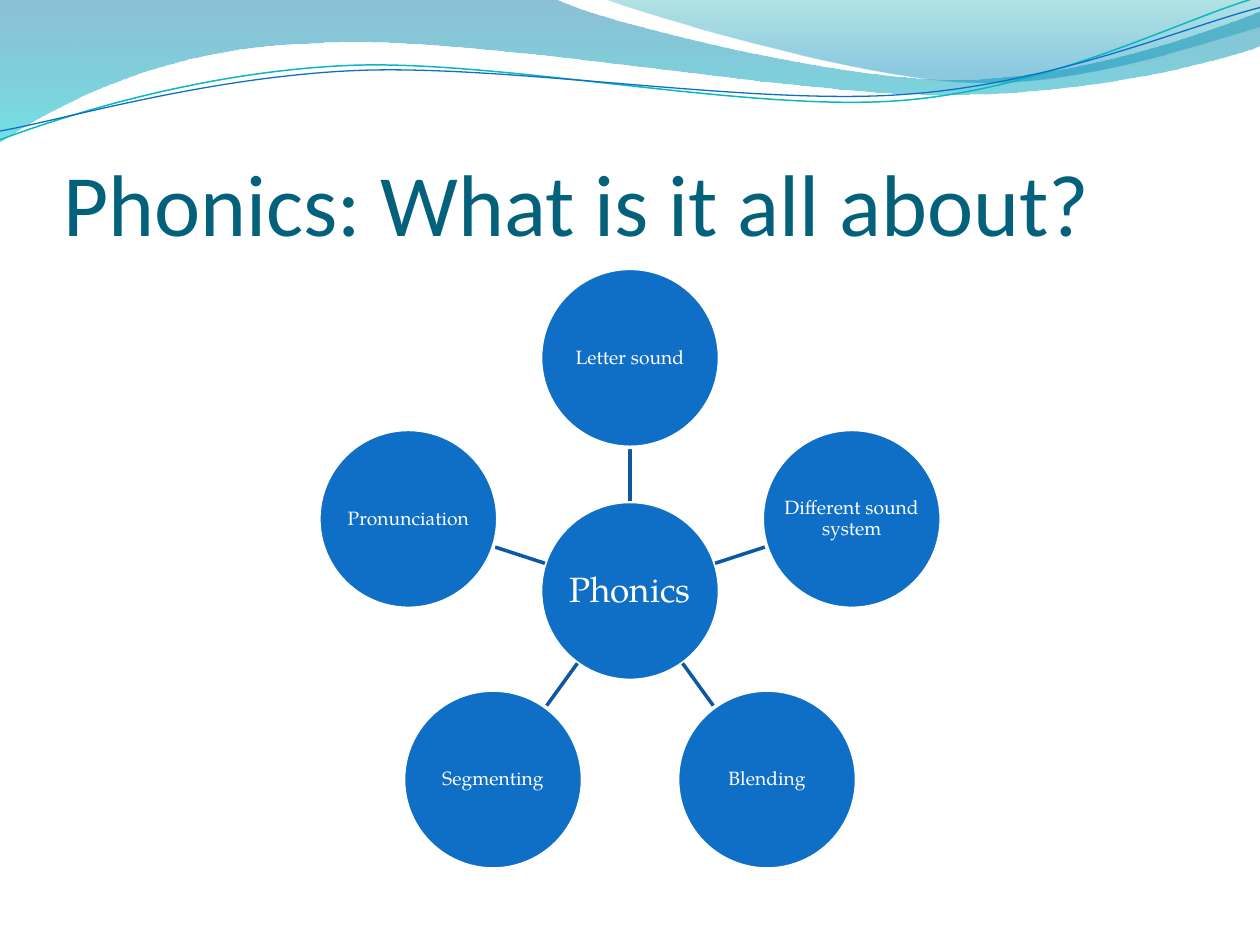
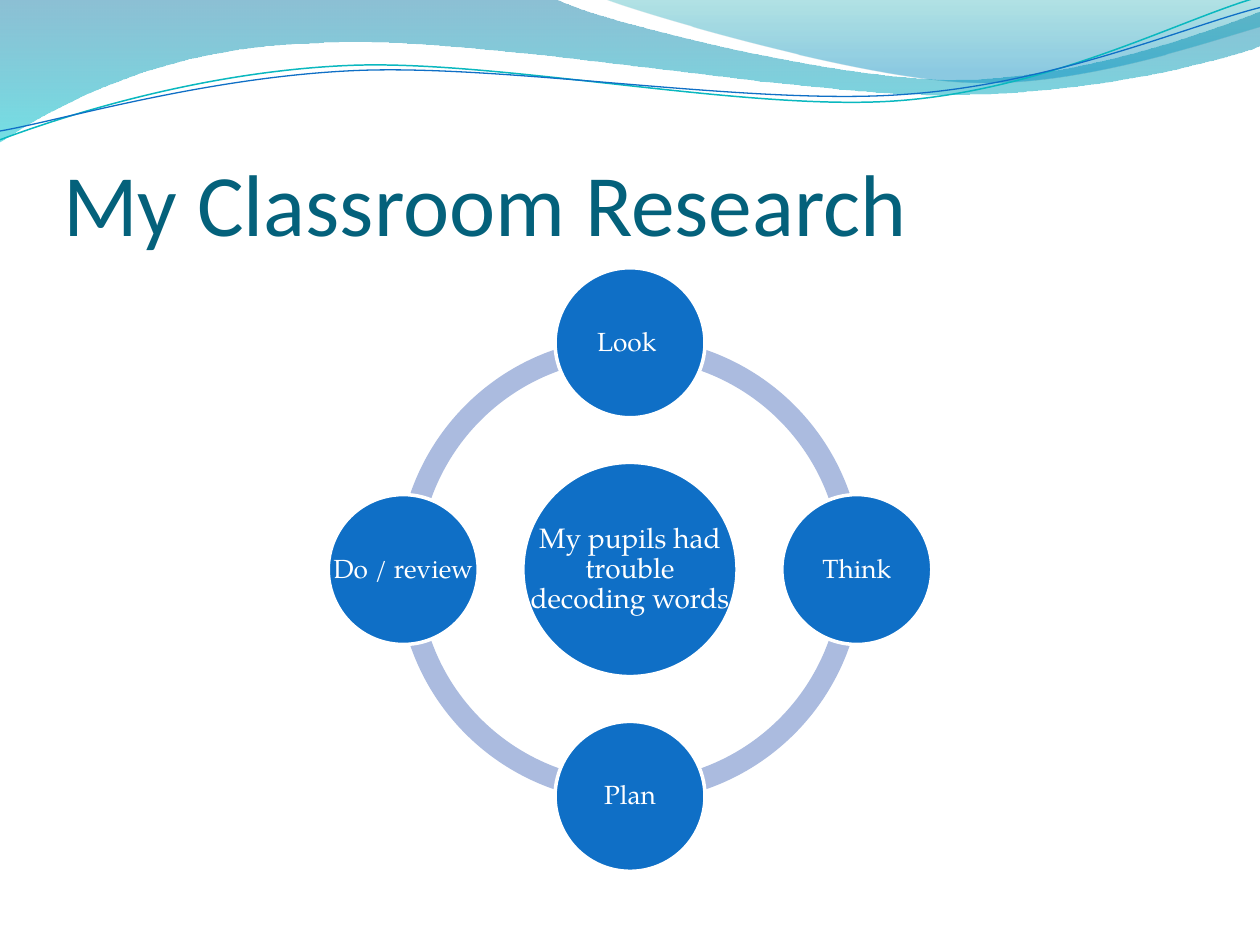
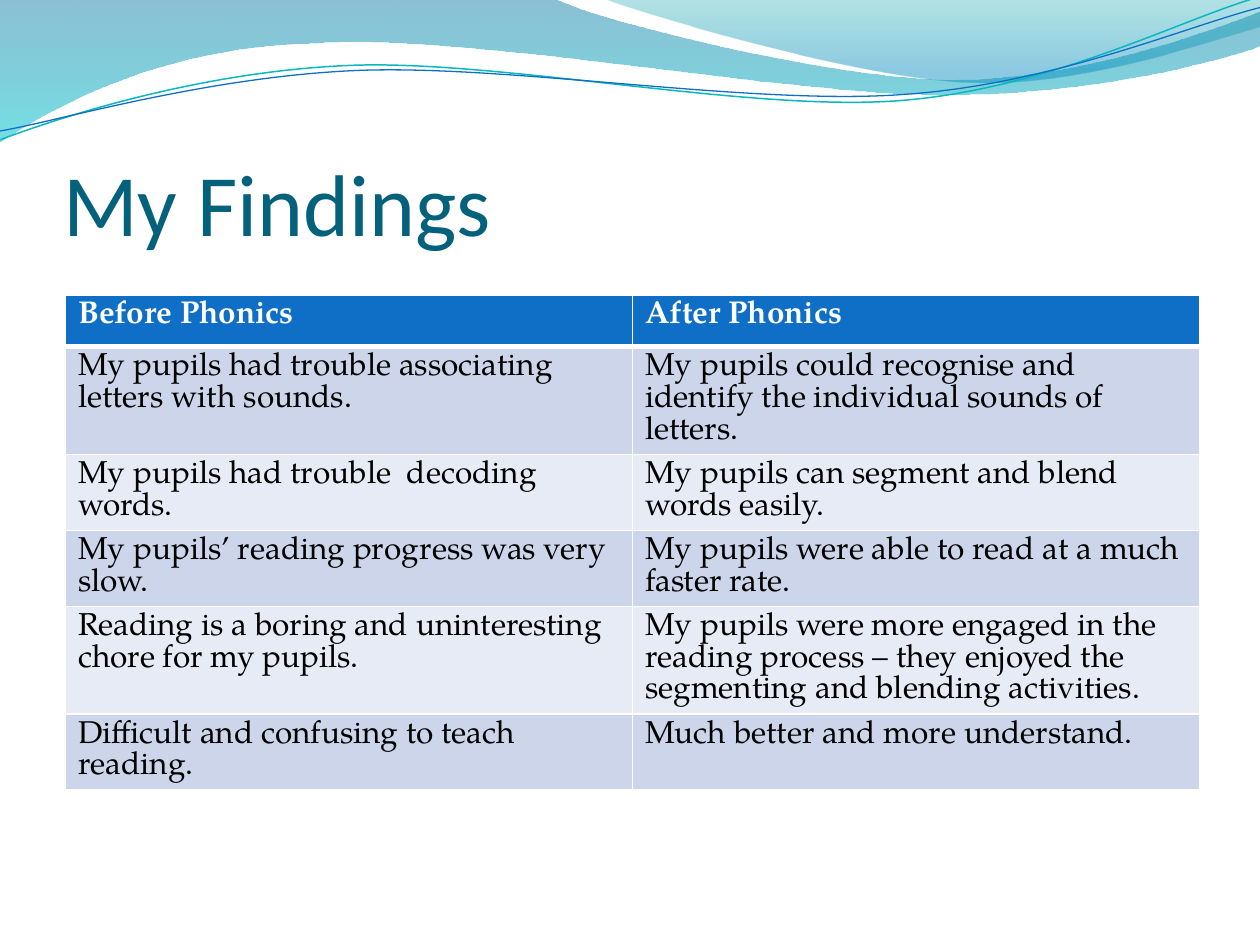
from dataclasses import dataclass
from math import cos, radians, sin

from lxml import etree
from pptx import Presentation
from pptx.dml.color import RGBColor
from pptx.enum import shapes, text
from pptx.oxml.ns import qn
from pptx.util import Inches, Pt


@dataclass(frozen=True)
class Theme:
    title_font: str = "Calibri"
    body_font: str = "TeX Gyre Pagella"
    title: str = "04617B"
    accent: str = "0F6FC6"
    spoke: str = "0C599F"
    ring: str = "ABBBDF"
    teal: str = "0AB8BF"
    white: str = "FFFFFF"
    black: str = "000000"
    bands: tuple = ("CCD5EA", "E7EBF5")
    title_size: float = 50
    hub_size: float = 20
    spoke_size: float = 11
    cycle_hub_size: float = 16
    cycle_size: float = 15
    table_size: float = 18
    outline: float = 2


THEME = Theme()

# Each wave: a start point, then corners (one point) or Bezier curves (three points).
# Gradient stops: position, colour, opacity in percent.
FILLED_WAVES = [
    ([[(0, 0)], [(4.4, -0.01)],
      [(4.76, 0.17), (6.64, 0.63), (7.58, 0.63)],
      [(8.53, 0.63), (9.58, 0.26), (10, 0.09)], [(10.01, 0.36)],
      [(9.83, 0.44), (8.7, 0.76), (7.46, 0.75)],
      [(6.22, 0.75), (3.82, 0.28), (2.57, 0.34)],
      [(1.29, 0.36), (0.46, 0.83), (-0.01, 1.13)], [(0, 0)]],
     [(0, "0074A1", 45), (1, "00C6CF", 55)]),
    ([[(4.79, -0.01)],
      [(5.09, 0.11), (6.82, 0.62), (7.69, 0.65)],
      [(8.56, 0.69), (9.61, 0.32), (10, 0.21)], [(10, 0)], [(4.79, -0.01)]],
     [(0, "00A1A9", 30), (0.8, "008BBF", 45)]),
]
LINE_WAVES = [
    ([[(0, 1.11)],
      [(0.48, 0.93), (1.58, 0.57), (2.77, 0.52)],
      [(3.95, 0.47), (5.93, 0.89), (7.13, 0.8)],
      [(8.33, 0.71), (9.38, 0.15), (9.98, -0.02)]], THEME.teal, 0.85),
    ([[(0, 1.04)],
      [(0.47, 0.96), (1.64, 0.61), (2.83, 0.56)],
      [(4.03, 0.51), (5.97, 0.84), (7.17, 0.75)],
      [(8.36, 0.67), (9.41, 0.21), (10, 0.06)]], THEME.accent, 0.75),
]

FINDINGS = [
    ("Before Phonics", "After Phonics"),
    ("My pupils had trouble associating letters with sounds.",
     "My pupils could recognise and identify the individual sounds of letters."),
    ("My pupils had trouble  decoding words.",
     "My pupils can segment and blend words easily."),
    ("My pupils’ reading progress was very slow.",
     "My pupils were able to read at a much faster rate."),
    ("Reading is a boring and uninteresting chore for my pupils.",
     "My pupils were more engaged in the reading process – they enjoyed the "
     "segmenting and blending activities."),
    ("Difficult and confusing to teach reading.",
     "Much better and more understand."),
]


def rgb(value):
    return RGBColor.from_string(value)


def style_text(tf, font, size, color, bold=False):
    for p in tf.paragraphs:
        for r in p.runs:
            r.font.name, r.font.size, r.font.bold = font, Pt(size), bold
            r.font.color.rgb = rgb(color)


def add_wave(slide, steps, closed):
    """Draw all points as a polygon, then join each group of three into a curve."""
    points = [(Inches(x), Inches(y)) for step in steps for x, y in step]
    builder = slide.shapes.build_freeform(*points[0])
    builder.add_line_segments(points[1:], close=closed)
    sp = builder.convert_to_shape()
    sp.shadow.inherit = False
    segments = iter(list(sp.element.iter(qn("a:lnTo"))))
    for step in steps[1:]:
        group = [next(segments) for _ in step]
        if len(group) == 3:
            curve = etree.Element(qn("a:cubicBezTo"))
            group[0].addprevious(curve)
            for segment in group:
                curve.append(segment[0])
                segment.getparent().remove(segment)
    return sp


def add_waves_to_master(prs, slide):
    """Draw the header waves and hand them over to the master, behind its placeholders."""
    waves = []
    for steps, stops in FILLED_WAVES:
        sp = add_wave(slide, steps, closed=True)
        sp.line.fill.background()
        sp.fill.gradient()
        sp.fill.gradient_angle = 270
        for stop, (position, color, _) in zip(sp.fill.gradient_stops, stops):
            stop.position, stop.color.rgb = position, rgb(color)
        for clr, (_, _, opacity) in zip(sp.element.iter(qn("a:srgbClr")), stops):
            etree.SubElement(clr, qn("a:alpha"), val=str(opacity * 1000))
        waves.append(sp)
    for steps, color, width in LINE_WAVES:
        sp = add_wave(slide, steps, closed=False)
        sp.fill.background()
        sp.line.color.rgb, sp.line.width = rgb(color), Pt(width)
        waves.append(sp)
    for i, sp in enumerate(waves):
        prs.slide_master.shapes.element.insert(2 + i, sp.element)


def add_titled_slide(prs, title):
    slide = prs.slides.add_slide(prs.slide_layouts.get_by_name("Title Only"))
    sp = slide.shapes.title
    sp.left, sp.top, sp.width, sp.height = map(Inches, (0.5, 0.77, 9, 1.25))
    tf = sp.text_frame
    tf.text = title
    tf.auto_size = text.MSO_AUTO_SIZE.NONE
    tf.vertical_anchor = text.MSO_ANCHOR.BOTTOM
    tf.margin_left = tf.margin_right = tf.margin_bottom = 0
    tf.margin_top = Inches(0.05)
    tf.paragraphs[0].alignment = text.PP_ALIGN.LEFT
    style_text(tf, THEME.title_font, THEME.title_size, THEME.title)
    return slide


def add_circle(slide, center, diameter, label, size):
    """Add a circle with a label that may use its full width."""
    box = [Inches(c - diameter / 2) for c in center] + [Inches(diameter)] * 2
    sp = slide.shapes.add_shape(shapes.MSO_SHAPE.OVAL, *box)
    sp.shadow.inherit = False
    sp.fill.solid()
    sp.fill.fore_color.rgb = rgb(THEME.accent)
    sp.line.color.rgb, sp.line.width = rgb(THEME.white), Pt(THEME.outline)
    tf = slide.shapes.add_textbox(*box).text_frame
    tf.word_wrap = True
    tf.vertical_anchor = text.MSO_ANCHOR.MIDDLE
    tf.margin_left = tf.margin_right = tf.margin_top = tf.margin_bottom = Inches(0.02)
    tf.text = label
    tf.paragraphs[0].alignment = text.PP_ALIGN.CENTER
    tf.paragraphs[0].line_spacing = 0.9
    style_text(tf, THEME.body_font, size, THEME.white)


def polar(center, radius, degrees):
    """Point at a clockwise angle from twelve o'clock."""
    a = radians(degrees)
    return center[0] + radius * sin(a), center[1] - radius * cos(a)


def add_spoke(slide, start, end):
    line = slide.shapes.add_connector(
        shapes.MSO_CONNECTOR.STRAIGHT, *map(Inches, (*start, *end)))
    line.line.color.rgb, line.line.width = rgb(THEME.spoke), Pt(THEME.outline)
    etree.SubElement(line.element.spPr, qn("a:effectLst"))


def add_radial(slide, center, radius, diameter, hub, labels):
    add_circle(slide, center, diameter, hub, THEME.hub_size)
    for i, label in enumerate(labels):
        angle = i * 360 / len(labels)
        add_spoke(slide, polar(center, diameter / 2, angle),
                  polar(center, radius - diameter / 2, angle))
        add_circle(slide, polar(center, radius, angle), diameter, label, THEME.spoke_size)


def add_cycle(slide, center, ring_diameter, radius, hub, labels):
    box = [Inches(c - ring_diameter / 2) for c in center] + [Inches(ring_diameter)] * 2
    quarter = 54  # 90 degrees in adjustment units
    for i in range(4):
        arc = slide.shapes.add_shape(shapes.MSO_SHAPE.BLOCK_ARC, *box)
        arc.shadow.inherit = False
        arc.adjustments[0] = quarter * i
        arc.adjustments[1] = quarter * ((i + 1) % 4)
        arc.adjustments[2] = 0.046
        arc.fill.solid()
        arc.fill.fore_color.rgb = rgb(THEME.ring)
        arc.line.fill.background()
    add_circle(slide, center, 1.7, hub, THEME.cycle_hub_size)
    for i, label in enumerate(labels):
        add_circle(slide, polar(center, radius, i * 360 / len(labels)), 1.19, label,
                   THEME.cycle_size)


def set_borders(cell, top, bottom):
    tc_pr = cell._tc.get_or_add_tcPr()
    for i, (side, width) in enumerate(
            (("lnL", 1), ("lnR", 1), ("lnT", top), ("lnB", bottom))):
        ln = etree.Element(qn(f"a:{side}"), w=str(Pt(width)))
        fill = etree.SubElement(ln, qn("a:solidFill"))
        etree.SubElement(fill, qn("a:srgbClr"), val=THEME.white)
        tc_pr.insert(i, ln)


def add_findings_table(slide, left, top, width, rows, row_height=0.41):
    table = slide.shapes.add_table(
        len(rows), len(rows[0]),
        *map(Inches, (left, top, width, row_height * len(rows)))).table
    for r, row in enumerate(rows):
        header = r == 0
        for c, words in enumerate(row):
            cell = table.cell(r, c)
            cell.text = words
            style_text(cell.text_frame, THEME.body_font, THEME.table_size,
                       THEME.white if header else THEME.black, bold=header)
            cell.fill.solid()
            cell.fill.fore_color.rgb = rgb(
                THEME.accent if header else THEME.bands[(r - 1) % 2])
            set_borders(cell, top=3 if r == 1 else 1, bottom=3 if header else 1)


def main():
    prs = Presentation()
    prs.slide_width, prs.slide_height = Inches(10), Inches(7.5)

    slide = add_titled_slide(prs, "Phonics: What is it all about?")
    add_waves_to_master(prs, slide)
    add_radial(slide, (5, 4.69), 1.85, 1.42, "Phonics",
               ["Letter sound", "Different sound system", "Blending", "Segmenting",
                "Pronunciation"])

    slide = add_titled_slide(prs, "My Classroom Research")
    add_cycle(slide, (5, 4.52), 3.69, 1.8, "My pupils had trouble decoding words",
              ["Look ", "Think", "Plan", "Do / review"])

    slide = add_titled_slide(prs, "My Findings")
    add_findings_table(slide, 0.52, 2.34, 9, FINDINGS)

    prs.save("out.pptx")


if __name__ == "__main__":
    main()
